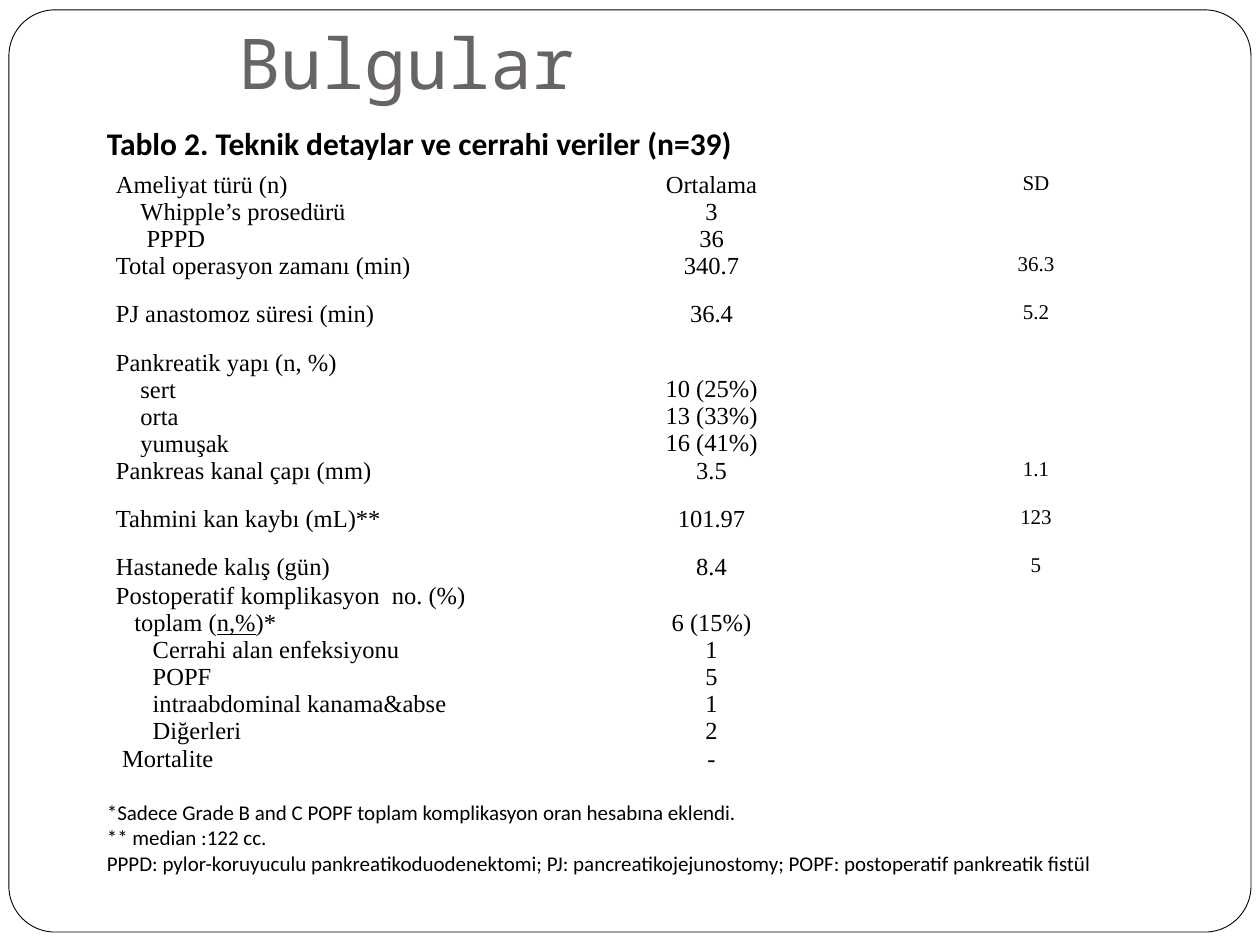
from dataclasses import dataclass

from pptx import Presentation
from pptx.dml.color import RGBColor
from pptx.enum.shapes import MSO_SHAPE
from pptx.enum.text import MSO_ANCHOR, PP_ALIGN
from pptx.util import Cm, Pt

ROUND_RECT = MSO_SHAPE.ROUNDED_RECTANGLE
BOTTOM, TOP = MSO_ANCHOR.BOTTOM, MSO_ANCHOR.TOP
LEFT, CENTER = PP_ALIGN.LEFT, PP_ALIGN.CENTER
TITLE_ONLY = 5


@dataclass(frozen=True)
class Theme:
    white: RGBColor = RGBColor(0xFF, 0xFF, 0xFF)
    black: RGBColor = RGBColor(0, 0, 0)
    gray: RGBColor = RGBColor(0x69, 0x64, 0x64)
    title_font: str = "Noto Sans Mono"
    caption_font: str = "Calibri"
    body_font: str = "Times New Roman"
    title_size: int = 40
    caption_size: int = 18
    body_size: int = 14
    small_size: int = 12
    space_width: float = 3.5  # points, one step of label indent
    line_height: float = 0.54  # cm, one line of body text


# Labels are (indent steps, text), with underlined text between underscores.
# Each row: height in cm, labels, values, standard deviation.
ROWS = [
    (1.63, [(2, "Ameliyat türü (n)"), (6, "Whipple’s prosedürü"), (7, "PPPD")],
     ["Ortalama", "3", "36"], "SD"),
    (0.97, [(2, "Total operasyon zamanı (min)")], ["340.7"], "36.3"),
    (0.97, [(2, "PJ anastomoz süresi (min)")], ["36.4"], "5.2"),
    (2.18, [(2, "Pankreatik yapı (n, %)"), (6, "sert"), (6, "orta"), (6, "yumuşak")],
     ["10 (25%)", "13 (33%)", "16 (41%)"], ""),
    (0.97, [(2, "Pankreas kanal çapı (mm)")], ["3.5"], "1.1"),
    (0.97, [(2, "Tahmini kan kaybı (mL)**")], ["101.97"], "123"),
    (0.58, [(2, "Hastanede kalış (gün)")], ["8.4"], "5"),
    (3.29, [(2, "Postoperatif komplikasyon  no. (%)"), (5, "toplam (_n,%_)*"),
            (8, "Cerrahi alan enfeksiyonu"), (8, "POPF"),
            (8, "intraabdominal kanama&abse"), (8, "Diğerleri")],
     ["6 (15%)", "1", "5", "1", "2"], ""),
    (0.97, [(3, "Mortalite")], ["-"], ""),
]
CAPTION = "Tablo 2. Teknik detaylar ve cerrahi veriler (n=39)"
NOTES = [
    "*Sadece Grade B and C POPF toplam komplikasyon oran hesabına eklendi.",
    "** median :122 cc.",
    "PPPD: pylor-koruyuculu pankreatikoduodenektomi; PJ: pancreatikojejunostomy; "
    "POPF: postoperatif pankreatik fistül",
]
COLUMNS = [9.7, 5.49, 7.59]
CAPTION_HEIGHT, NOTES_HEIGHT = 1.05, 2.41


class SlideBuilder:
    def __init__(self, prs, theme):
        self.theme = theme
        self.s = prs.slides.add_slide(prs.slide_layouts[TITLE_ONLY])

    def style(self, p, font, size, color, bold=False, align=LEFT):
        p.alignment = align
        p.font.name, p.font.size, p.font.bold = font, Pt(size), bold
        p.font.color.rgb = color

    def frame(self, x, y, w, h):
        sp = self.s.shapes.add_shape(ROUND_RECT, Cm(x), Cm(y), Cm(w), Cm(h))
        sp.adjustments[0] = 0.05
        sp.shadow.inherit = False
        sp.fill.solid()
        sp.fill.fore_color.rgb = self.theme.white
        sp.line.color.rgb = self.theme.black
        sp.line.width = Pt(0.5)
        # Move behind the title
        self.s.shapes._spTree.insert(2, sp._element)

    def title(self, text, x, y, w, h):
        t = self.theme
        sp = self.s.shapes.title
        sp.left, sp.top, sp.width, sp.height = Cm(x), Cm(y), Cm(w), Cm(h)
        tf = sp.text_frame
        tf.text = text
        tf.vertical_anchor = BOTTOM
        tf.margin_left, tf.margin_bottom = Cm(1.1), Cm(0.25)
        self.style(tf.paragraphs[0], t.title_font, t.title_size, t.gray)

    def cell(self, cell, lines, font, size, bold=False, align=LEFT):
        """Fill a cell with (indent, text) lines."""
        cell.fill.background()
        cell.vertical_anchor = TOP
        tf = cell.text_frame
        for i, (indent, text) in enumerate(lines):
            p = tf.paragraphs[0] if i == 0 else tf.add_paragraph()
            self.style(p, font, size, self.theme.black, bold, align)
            if indent:
                p._p.get_or_add_pPr().set("marL", str(Pt(indent * self.theme.space_width)))
            for j, part in enumerate(text.split("_")):
                if part:
                    r = p.add_run()
                    r.text = part
                    if j % 2:
                        r.font.underline = True

    def body_cell(self, cell, lines, size, align=LEFT, skip=0):
        """Fill a tight cell whose text starts `skip` lines down."""
        cell.margin_left = cell.margin_right = Cm(0.19)
        cell.margin_top, cell.margin_bottom = Cm(skip * self.theme.line_height), 0
        self.cell(cell, lines, self.theme.body_font, size, align=align)

    def table(self, x, y):
        t = self.theme
        heights = [CAPTION_HEIGHT, *(row[0] for row in ROWS), NOTES_HEIGHT]
        table = self.s.shapes.add_table(
            len(heights), len(COLUMNS), Cm(x), Cm(y),
            Cm(sum(COLUMNS)), Cm(sum(heights))).table
        table.first_row = table.horz_banding = False
        for column, width in zip(table.columns, COLUMNS):
            column.width = Cm(width)
        for row, height in zip(table.rows, heights):
            row.height = Cm(height)

        # Caption and notes span all columns
        last = len(heights) - 1
        for i in (0, last):
            table.cell(i, 0).merge(table.cell(i, len(COLUMNS) - 1))
        self.cell(table.cell(0, 0), [(0, CAPTION)], t.caption_font, t.caption_size, bold=True)
        self.cell(table.cell(last, 0), [(0, note) for note in NOTES],
                  t.caption_font, t.small_size)

        # Values line up with the last labels of their row
        for i, (_, labels, values, sd) in enumerate(ROWS, start=1):
            self.body_cell(table.cell(i, 0), labels, t.body_size)
            self.body_cell(table.cell(i, 1), [(0, v) for v in values], t.body_size,
                           CENTER, skip=len(labels) - len(values))
            self.body_cell(table.cell(i, 2), [(0, sd)], t.small_size, CENTER)


def main():
    prs = Presentation()
    prs.slide_width, prs.slide_height = Cm(25.4), Cm(19.05)
    slide = SlideBuilder(prs, Theme())
    slide.frame(0.18, 0.2, 25.04, 18.59)
    slide.title("Bulgular", 3.71, -0.84, 21.59, 3.18)
    slide.table(1.9, 2.41)
    prs.save("out.pptx")


if __name__ == "__main__":
    main()
